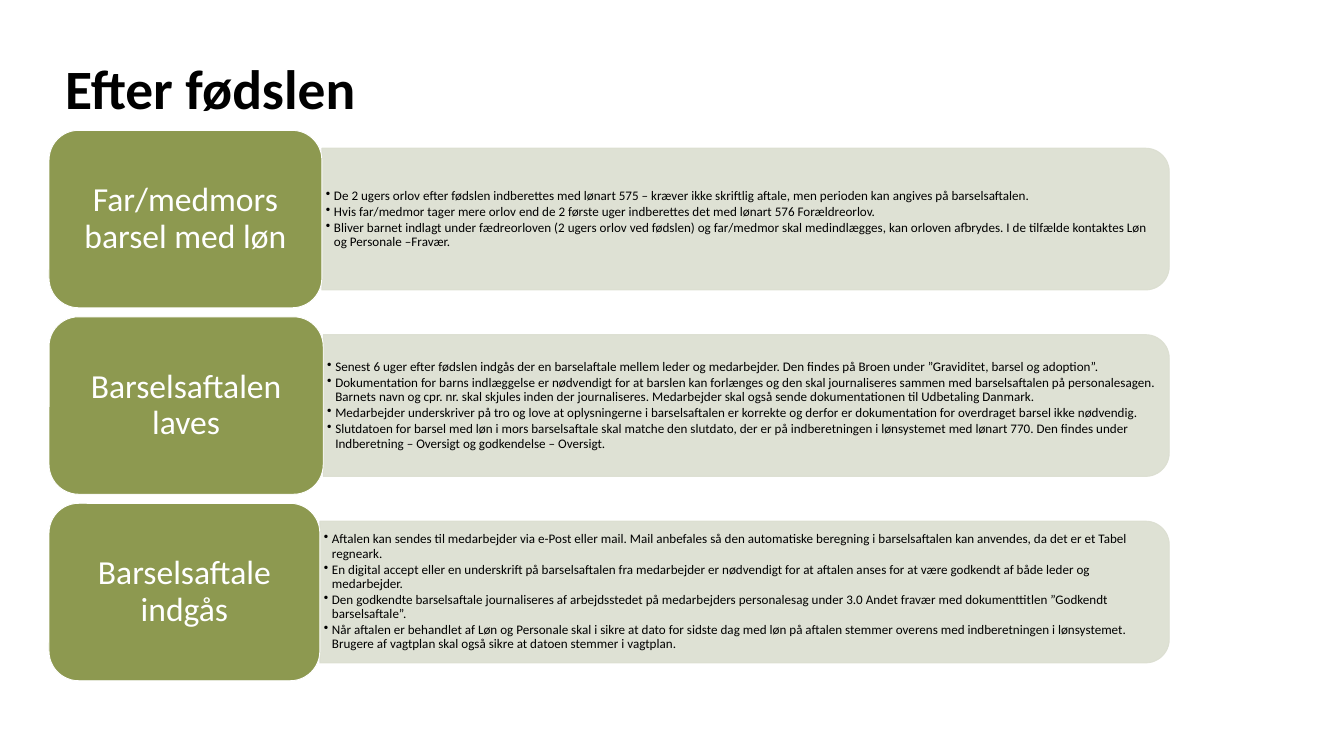
"""Build the slide on steps to take after the birth."""
from lxml import etree
from pptx import Presentation, util as u
from pptx.dml.color import RGBColor
from pptx.enum import shapes, text
from pptx.oxml.ns import qn

HEAD = "Efter fødslen"
ROWS = [
    ("Far/medmors barsel med løn", 406, [
        "De 2 ugers orlov efter fødslen indberettes med lønart 575 – kræver ikke skriftlig aftale, men perioden kan angives på barselsaftalen.",
        "Hvis far/medmor tager mere orlov end de 2 første uger indberettes det med lønart 576 Forældreorlov.",
        "Bliver barnet indlagt under fædreorloven (2 ugers orlov ved fødslen) og far/medmor skal medindlægges, kan orloven afbrydes. I de tilfælde kontaktes Løn og Personale –Fravær.",
    ]),
    ("Barselsaftalen laves", 408, [
        "Senest 6 uger efter fødslen indgås der en barselaftale mellem leder og medarbejder. Den findes på Broen under ”Graviditet, barsel og adoption”.",
        "Dokumentation for barns indlæggelse er nødvendigt for at barslen kan forlænges og den skal journaliseres sammen med barselsaftalen på personalesagen. Barnets navn og cpr. nr. skal skjules inden der journaliseres. Medarbejder skal også sende dokumentationen til Udbetaling Danmark.",
        "Medarbejder underskriver på tro og love at oplysningerne i barselsaftalen er korrekte og derfor er dokumentation for overdraget barsel ikke nødvendig.",
        "Slutdatoen for barsel med løn i mors barselsaftale skal matche den slutdato, der er på indberetningen i lønsystemet med lønart 770. Den findes under Indberetning – Oversigt og godkendelse – Oversigt.",
    ]),
    ("Barselsaftale indgås", 403, [
        "Aftalen kan sendes til medarbejder via e-Post eller mail. Mail anbefales så den automatiske beregning i barselsaftalen kan anvendes, da det er et Tabel regneark.",
        "En digital accept eller en underskrift på barselsaftalen fra medarbejder er nødvendigt for at aftalen anses for at være godkendt af både leder og medarbejder.",
        "Den godkendte barselsaftale journaliseres af arbejdsstedet på medarbejders personalesag under 3.0 Andet fravær med dokumenttitlen ”Godkendt barselsaftale”.",
        "Når aftalen er behandlet af Løn og Personale skal i sikre at dato for sidste dag med løn på aftalen stemmer overens med indberetningen i lønsystemet. Brugere af vagtplan skal også sikre at datoen stemmer i vagtplan.",
    ]),
]

PX = 9144
LEFT, TOP, STEP, CARD = 73, 194, 277.5, 264
RIGHT, BAR, BODY, PAD = 1740, 211, 191, 10
GREEN = RGBColor(0x8D, 0x99, 0x50)
PALE = RGBColor(0xDB, 0xDE, 0xD0)
WHITE = RGBColor(255, 255, 255)
BLACK = RGBColor(0, 0, 0)


def px(*vals):
    return [int(v * PX) for v in vals]


def put(obj, form):
    for key, val in form.items():
        setattr(obj, key, val)


def frame(tf, pad):
    names = ("margin_left", "margin_top", "margin_right", "margin_bottom")
    put(tf, dict(zip(names, px(*pad, *pad))))
    put(tf, {"word_wrap": True, "auto_size": text.MSO_AUTO_SIZE.NONE,
             "vertical_anchor": text.MSO_ANCHOR.MIDDLE})


def style(para, size, color, **form):
    put(para, {"line_spacing": 0.9, **form})
    put(para.font, {"name": "Calibri", "size": u.Pt(size)})
    para.font.color.rgb = color


def shape(slide, kind, box, fill, line):
    item = slide.shapes.add_shape(kind, *px(*box))
    item.shadow.inherit = False
    item.fill.solid()
    item.fill.fore_color.rgb = fill
    item.line.color.rgb = line
    item.line.width = u.Pt(1)
    return item


def draw_bar(slide, left, mid):
    wide = RIGHT - left
    box = (left + wide / 2 - BAR / 2, mid - wide / 2, BAR, wide)
    bar = shape(slide, shapes.MSO_SHAPE.ROUND_2_SAME_RECTANGLE, box, PALE, PALE)
    bar.rotation = 90
    for clr in bar.element.spPr.iter(qn("a:srgbClr")):
        etree.SubElement(clr, qn("a:alpha"), val="90000")


def draw_list(slide, left, mid, items):
    box = (left, mid - BODY / 2, RIGHT - PAD - left, BODY)
    tf = slide.shapes.add_textbox(*px(*box)).text_frame
    frame(tf, (6, 3))
    for i, item in enumerate(items):
        para = tf.paragraphs[0] if i == 0 else tf.add_paragraph()
        para.text = item
        para.level = 1
        props = para._p.get_or_add_pPr()
        props.set("marL", str(12 * PX))
        props.set("indent", str(-12 * PX))
        etree.SubElement(props, qn("a:buChar"), char="•")
        style(para, 14, BLACK, space_after=u.Pt(2.1),
              alignment=text.PP_ALIGN.LEFT)


def draw_card(slide, top, wide, label):
    card = shape(slide, shapes.MSO_SHAPE.ROUNDED_RECTANGLE,
                 (LEFT, top, wide, CARD), GREEN, WHITE)
    tf = card.text_frame
    tf.text = label
    frame(tf, (15, 7))
    style(tf.paragraphs[0], 36, WHITE, alignment=text.PP_ALIGN.CENTER)


def main():
    deck = Presentation()
    deck.slide_width, deck.slide_height = px(2000, 1125)
    slide = deck.slides.add_slide(deck.slide_layouts[5])
    for i, (label, wide, items) in enumerate(ROWS):
        top = TOP + STEP * i
        mid = top + CARD / 2
        draw_bar(slide, LEFT + wide, mid)
        draw_list(slide, LEFT + wide, mid, items)
        draw_card(slide, top, wide, label)
    title = slide.shapes.title
    put(title, dict(zip(("left", "top", "width", "height"),
                        px(87, 87, 1517, 97))))
    title.text_frame.text = HEAD
    frame(title.text_frame, (10, 5))
    para = title.text_frame.paragraphs[0]
    style(para, 59.4, BLACK, alignment=text.PP_ALIGN.LEFT)
    para.font.bold = True
    deck.save("out.pptx")


if __name__ == "__main__":
    main()
